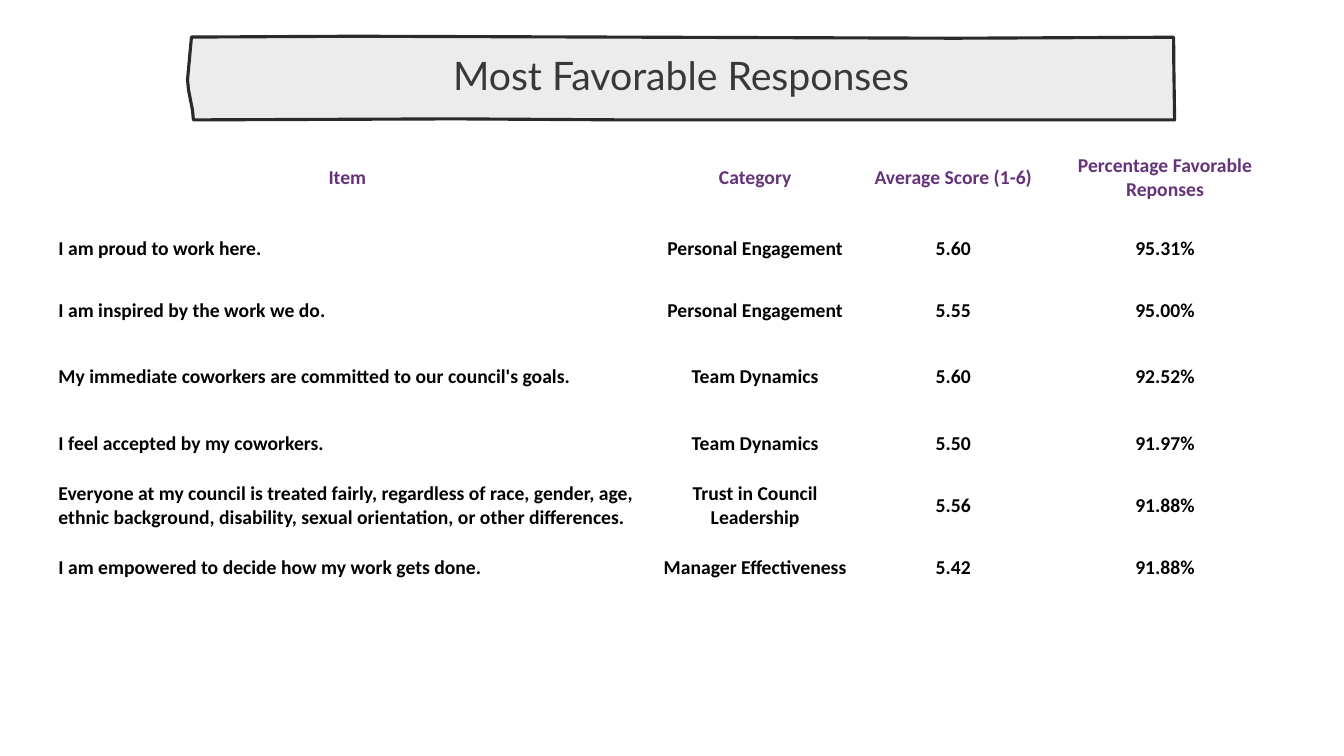
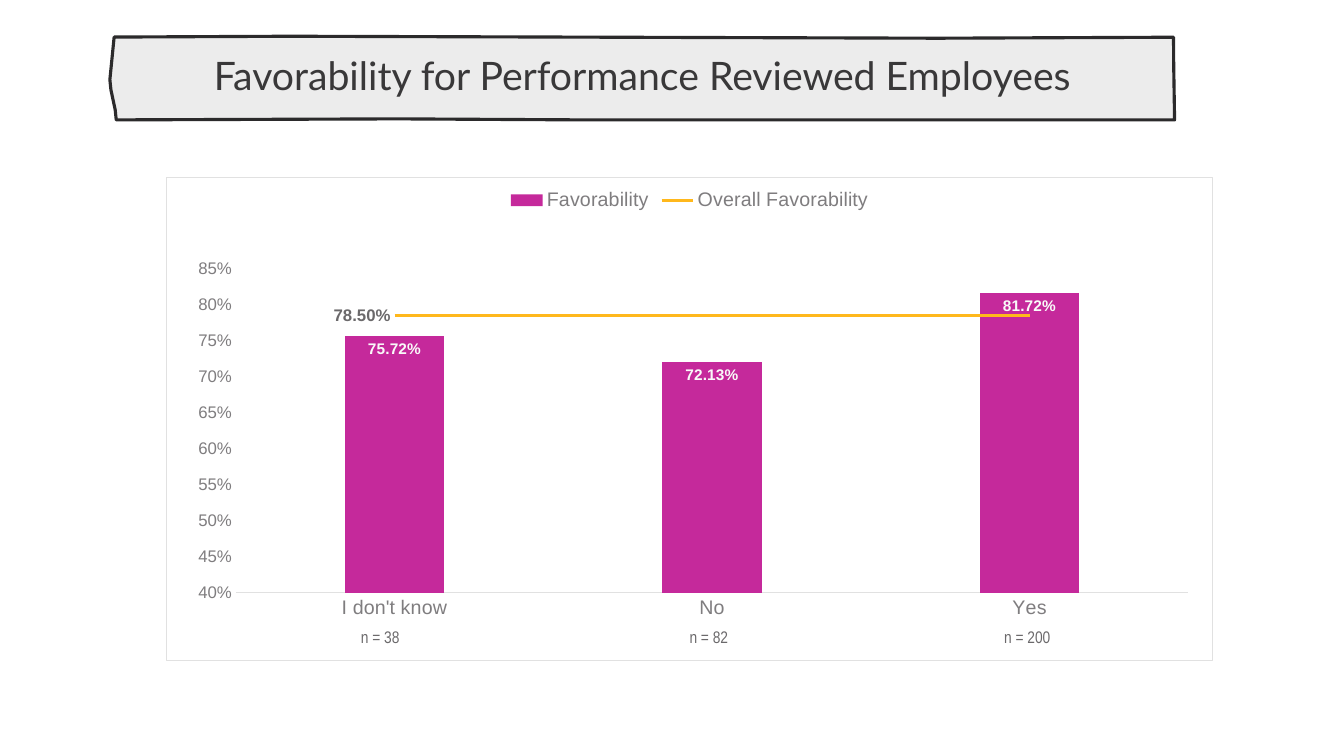
from pptx import Presentation
from pptx import util as u
from pptx.chart import data
from pptx.dml import color
from pptx.enum import chart as ch, text
from pptx.oxml import parse_xml
from pptx.oxml.ns import nsdecls

DARK, GREY, BORDER, WHITE = "393839", "7F7D7F", "E1E1E1", "FFFFFF"
BANNER_RIGHT, BANNER_TOP, BANNER_HEIGHT = 11.65, 0.36, 0.83
BANNER_OUTLINE = [(0.4, 1), (16.9, 0), (77.7, 2.4), (99.9, 1.2), (99.92, 35), (100, 100),
                  (84.8, 100), (44.4, 100), (27, 98.8), (0.6, 100), (0.5, 88),
                  (0.3, 76), (0.1, 64), (0, 52)]

RESPONSES = [
    ("", "", "", ""),
    ("Item", "Category", "Average Score (1-6)", "Percentage Favorable Reponses"),
    ("I am proud to work here.", "Personal Engagement", "5.60", "95.31%"),
    ("I am inspired by the work we do.", "Personal Engagement", "5.55", "95.00%"),
    ("My immediate coworkers are committed to our council's goals.", "Team Dynamics",
     "5.60", "92.52%"),
    ("I feel accepted by my coworkers.", "Team Dynamics", "5.50", "91.97%"),
    ("Everyone at my council is treated fairly, regardless of race, gender, age, ethnic "
     "background, disability, sexual orientation, or other differences.",
     "Trust in Council Leadership", "5.56", "91.88%"),
    ("I am empowered to decide how my work gets done.", "Manager Effectiveness",
     "5.42", "91.88%"),
    ("", "", "", ""),
]
COLUMN_WIDTHS = [6.05, 2.04, 1.89, 2.31]
ROW_HEIGHTS = [0.3, 0.81, 0.61, 0.61, 0.71, 0.61, 0.62, 0.61, 0.3]
HEADER_ROW = 1

REVIEWED = ["I don't know", "No", "Yes"]
FAVORABILITY = [0.7572, 0.7213, 0.8172]
OVERALL = 0.785
SAMPLE_SIZES = [(0.41, "n = 38"), (3.67, "n = 82"), (6.79, "n = 200")]
PLOT_AREA = {"x": 0.066, "y": 0.189, "w": 0.911, "h": 0.67}


def rgb(value):
    return color.RGBColor.from_string(value)


def apply(target, **values):
    for name, value in values.items():
        setattr(target, name, value)


def style(font, size, tint, name="Arial", bold=False):
    apply(font, size=u.Pt(size), name=name, bold=bold)
    font.color.rgb = rgb(tint)


def paint(fill, tint):
    fill.solid()
    fill.fore_color.rgb = rgb(tint)


def stroke(line, tint, width):
    line.color.rgb = rgb(tint)
    line.width = u.Pt(width)


def titled_slide(deck, title, left):
    slide = deck.slides.add_slide(deck.slide_layouts[5])
    width = BANNER_RIGHT - left
    points = [(u.Inches(left + width * x / 100), u.Inches(BANNER_TOP + BANNER_HEIGHT * y / 100))
              for x, y in BANNER_OUTLINE]
    builder = slide.shapes.build_freeform(*points[0])
    builder.add_line_segments(points[1:], close=True)
    banner = builder.convert_to_shape()
    banner.shadow.inherit = False
    paint(banner.fill, "ECECEC")
    stroke(banner.line, "2B2A2B", 2.25)

    heading = slide.shapes.title
    heading._element.addprevious(banner._element)
    apply(heading, left=u.Inches(left), top=u.Inches(BANNER_TOP),
          width=u.Inches(width), height=u.Inches(BANNER_HEIGHT))
    frame = heading.text_frame
    frame.text = title
    apply(frame, word_wrap=True, auto_size=text.MSO_AUTO_SIZE.NONE,
          vertical_anchor=text.MSO_ANCHOR.MIDDLE)
    apply(frame.paragraphs[0], alignment=text.PP_ALIGN.CENTER, line_spacing=0.9)
    style(frame.paragraphs[0].runs[0].font, 28, DARK, "Lato")
    return slide


def add_responses(slide):
    graphic = slide.shapes.add_table(
        len(RESPONSES), len(COLUMN_WIDTHS), u.Inches(0.42), u.Inches(1.05),
        u.Inches(sum(COLUMN_WIDTHS)), u.Inches(sum(ROW_HEIGHTS)))
    banner = slide.shapes[0]
    banner._element.addprevious(graphic._element)
    table = graphic.table
    apply(table, first_row=False, horz_banding=False)
    for column, width in zip(table.columns, COLUMN_WIDTHS):
        column.width = u.Inches(width)
    for row, height in zip(table.rows, ROW_HEIGHTS):
        row.height = u.Inches(height)
    for r, values in enumerate(RESPONSES):
        for c, value in enumerate(values):
            cell = table.cell(r, c)
            is_item = c == 0 and r > HEADER_ROW
            apply(cell, vertical_anchor=text.MSO_ANCHOR.MIDDLE,
                  margin_left=u.Inches(0.16 if is_item else 0.01),
                  margin_right=u.Inches(0.01), margin_top=u.Inches(0.01), margin_bottom=0)
            if value:
                paint(cell.fill, WHITE)
            else:
                cell.fill.background()
            paragraph = cell.text_frame.paragraphs[0]
            paragraph.alignment = text.PP_ALIGN.LEFT if is_item else text.PP_ALIGN.CENTER
            run = paragraph.add_run()
            run.text = value
            style(run.font, 14, "653379" if r == HEADER_ROW else "000000", "Calibri", True)


def split_line_series(chart):
    bars = chart.plots[0]._element
    overall = bars.findall("{*}ser")[1]
    for flag in overall.findall("{*}invertIfNegative"):
        overall.remove(flag)
    lines = parse_xml(f'<c:lineChart {nsdecls("c")}><c:grouping val="standard"/>'
                      '<c:varyColors val="0"/><c:marker val="1"/></c:lineChart>')
    lines.insert(2, overall)
    for axis in bars.findall("{*}axId"):
        lines.append(parse_xml(f'<c:axId {nsdecls("c")} val="{axis.get("val")}"/>'))
    bars.addnext(lines)


def frame_chart(chart):
    space = chart._chartSpace
    area = space.find("{*}chart").find("{*}plotArea")
    for layout in area.findall("{*}layout"):
        area.remove(layout)
    sizes = "".join(f'<c:{key} val="{value}"/>' for key, value in PLOT_AREA.items())
    area.insert(0, parse_xml(
        f'<c:layout {nsdecls("c")}><c:manualLayout><c:layoutTarget val="inner"/>'
        f'<c:xMode val="edge"/><c:yMode val="edge"/>{sizes}</c:manualLayout></c:layout>'))
    space.find("{*}chart").addnext(parse_xml(
        f'<c:spPr {nsdecls("c", "a")}><a:solidFill><a:srgbClr val="{WHITE}"/></a:solidFill>'
        f'<a:ln w="{u.Pt(0.75)}"><a:solidFill><a:srgbClr val="{BORDER}"/></a:solidFill></a:ln>'
        '</c:spPr>'))


def add_favorability(slide):
    numbers = data.CategoryChartData(number_format="0.00%")
    numbers.categories = REVIEWED
    numbers.add_series("Favorability", FAVORABILITY)
    numbers.add_series("Overall Favorability", [OVERALL] * len(REVIEWED))
    chart = slide.shapes.add_chart(
        ch.XL_CHART_TYPE.COLUMN_CLUSTERED, u.Inches(1.65), u.Inches(1.76),
        u.Inches(10.38), u.Inches(4.8), numbers).chart
    split_line_series(chart)
    style(chart.font, 10, DARK)
    frame_chart(chart)
    apply(chart, has_title=False, has_legend=True)
    apply(chart.legend, position=ch.XL_LEGEND_POSITION.TOP, include_in_layout=False)
    style(chart.legend.font, 14, GREY)

    for axis, size in ((chart.category_axis, 14), (chart.value_axis, 12)):
        apply(axis, has_major_gridlines=False, major_tick_mark=ch.XL_TICK_MARK.NONE,
              minor_tick_mark=ch.XL_TICK_MARK.NONE)
        style(axis.tick_labels.font, size, GREY)
    stroke(chart.category_axis.format.line, BORDER, 0.75)
    apply(chart.value_axis, minimum_scale=0.4, maximum_scale=0.85, major_unit=0.05)
    apply(chart.value_axis.tick_labels, number_format="0%", number_format_is_linked=False)
    chart.value_axis.format.line.fill.background()

    bar_plot, line_plot = chart.plots
    apply(bar_plot, gap_width=219, vary_by_categories=False)
    bars, overall = bar_plot.series[0], line_plot.series[0]
    paint(bars.format.fill, "C5299B")
    apply(bars.data_labels, show_value=True, number_format="0.00%",
          number_format_is_linked=False, position=ch.XL_LABEL_POSITION.INSIDE_END)
    style(bars.data_labels.font, 11, "F9FAF9", bold=True)

    stroke(overall.format.line, "FFB81C", 2.25)
    overall.smooth = False
    overall.marker.style = ch.XL_MARKER_STYLE.NONE
    label = overall.points[0].data_label
    style(label.font, 12, "6B696B", bold=True)
    label.position = ch.XL_LABEL_POSITION.LEFT
    overall.data_labels.show_value = False


def add_sample_sizes(slide):
    box = slide.shapes.add_textbox(u.Inches(3.07), u.Inches(6.17), u.Inches(8.01), u.Inches(0.3))
    box.text_frame.word_wrap = True
    paragraph = box.text_frame.paragraphs[0]
    stops = "".join(f'<a:tab pos="{u.Inches(stop)}" algn="l"/>' for stop, _ in SAMPLE_SIZES)
    paragraph._p.get_or_add_pPr().append(
        parse_xml(f'<a:tabLst {nsdecls("a")}>{stops}</a:tabLst>'))
    run = paragraph.add_run()
    run.text = "".join("\t" + size for _, size in SAMPLE_SIZES)
    style(run.font, 12, "6B696B", "Arial Narrow")


def main():
    deck = Presentation()
    apply(deck, slide_width=u.Inches(13.33), slide_height=u.Inches(7.5))
    add_responses(titled_slide(deck, "Most Favorable Responses", 1.86))
    reviewed = titled_slide(deck, "Favorability for Performance Reviewed Employees", 1.09)
    add_favorability(reviewed)
    add_sample_sizes(reviewed)
    deck.save("out.pptx")


if __name__ == "__main__":
    main()
